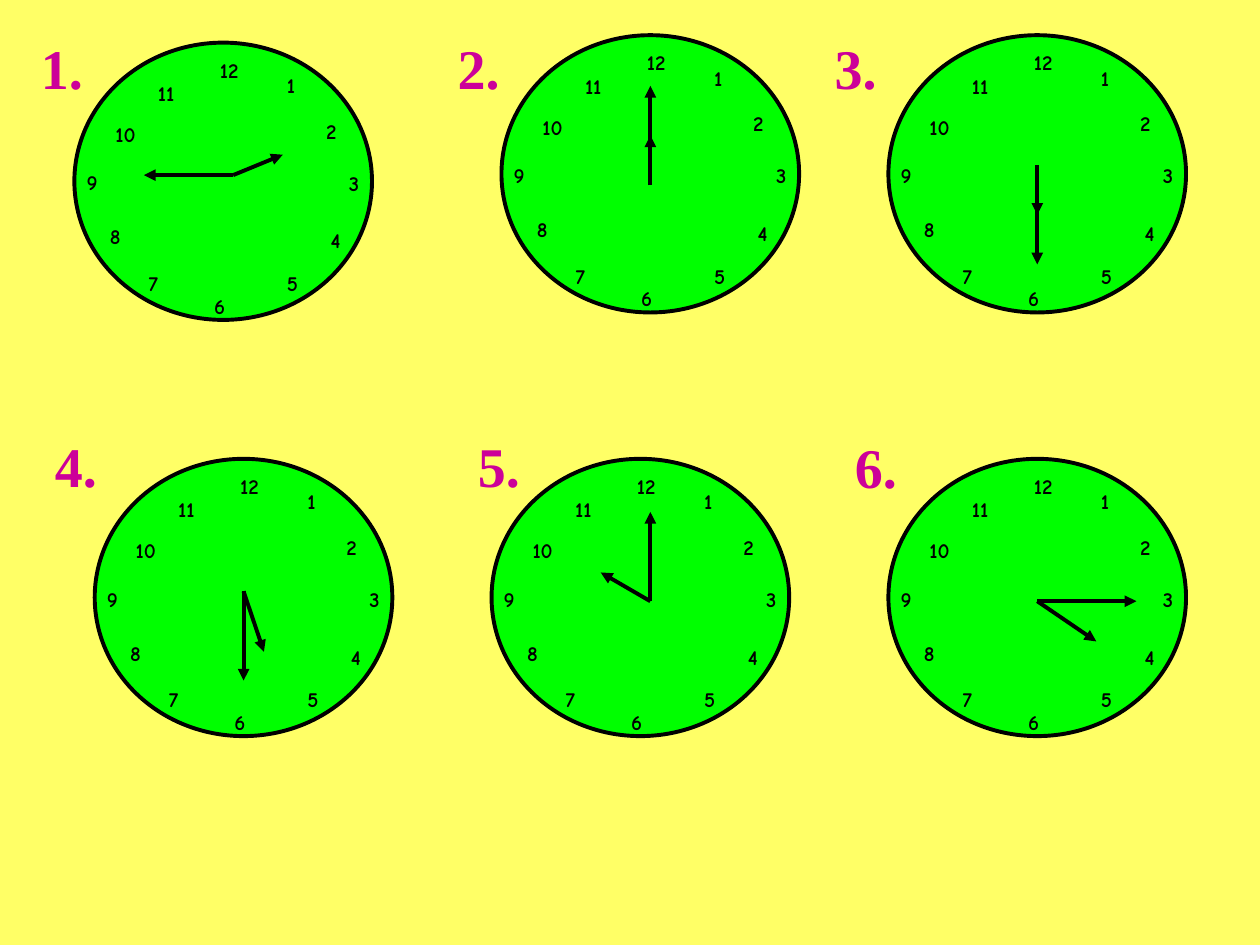
from lxml import etree
from pptx import Presentation
from pptx.dml.color import RGBColor
from pptx.enum.shapes import MSO_CONNECTOR, MSO_SHAPE
from pptx.enum.text import MSO_AUTO_SIZE, PP_ALIGN
from pptx.oxml.ns import qn
from pptx.util import Cm, Pt

OVAL = MSO_SHAPE.OVAL
LINE = MSO_CONNECTOR.STRAIGHT
CENTER = PP_ALIGN.CENTER
GROW = MSO_AUTO_SIZE.SHAPE_TO_FIT_TEXT
FIXED = MSO_AUTO_SIZE.NONE

YELLOW = RGBColor(0xFF, 0xFF, 0x66)
GREEN = RGBColor(0x00, 0xFF, 0x00)
BLACK = RGBColor(0x00, 0x00, 0x00)
PINK = RGBColor(0xCC, 0x00, 0x99)

WIDE, HIGH = 6, 5.59
HOUR = {
    "frame": {"word_wrap": False, "auto_size": GROW},
    "para": {"alignment": CENTER},
    "font": {"name": "Comic Neue", "size": Pt(12), "bold": True},
    "color": BLACK,
}
LABEL = {
    "frame": {"word_wrap": True, "auto_size": FIXED},
    "para": {"alignment": CENTER, "line_spacing": 0.9},
    "font": {"name": "Times New Roman", "size": Pt(32), "bold": True},
    "color": PINK,
}
HOURS = [
    (4.34, 0.48), (5.13, 1.4), (5.59, 2.45), (5.22, 3.61),
    (4.34, 4.47), (2.87, 4.93), (1.55, 4.47), (0.77, 3.53),
    (0.3, 2.44), (1.03, 1.47), (1.85, 0.64), (3.12, 0.17),
]
CLOCKS = [
    {"box": (1.5, 0.86), "label": (-1.09, -0.15), "hub": (3.2, 2.67),
     "hands": [(-1.8, 0), (1, -0.41)]},
    {"box": (10.11, 0.71), "label": (-1.3, 0), "hub": (3, 3.02),
     "hands": [(0, -2), (0, -1)]},
    {"box": (17.91, 0.71), "label": (-1.5, 0), "hub": (3, 2.62),
     "hands": [(0, 2), (0, 1)]},
    {"box": (1.91, 9.25), "label": (-1.22, -0.53), "hub": (3, 2.67),
     "hands": [(0, 1.8), (0.41, 1.22)]},
    {"box": (9.91, 9.25), "label": (-0.69, -0.53), "hub": (3.2, 2.87),
     "hands": [(0, -1.8), (-1, -0.58)]},
    {"box": (17.91, 9.25), "label": (-1.09, -0.51), "hub": (3, 2.87),
     "hands": [(2, 0), (1.19, 0.81)]},
]


def apply(target, values):
    """Set each attribute named in values on the target."""
    for name, value in values.items():
        setattr(target, name, value)


def write(shapes, text, box, style):
    """Place one line of styled text in the box."""
    frame = shapes.add_textbox(*map(Cm, box)).text_frame
    para = frame.paragraphs[0]
    run = para.add_run()
    run.text = text
    apply(frame, style["frame"])
    apply(para, style["para"])
    apply(run.font, style["font"])
    run.font.color.rgb = style["color"]


def ink(line):
    """Give a line the black stroke of the clocks."""
    line.color.rgb = BLACK
    line.width = Pt(2.25)


def face(slide, left, top):
    """Draw the dial and its twelve hours as one group."""
    shapes = slide.shapes.add_group_shape().shapes
    dial = shapes.add_shape(OVAL, Cm(left), Cm(top), Cm(WIDE), Cm(HIGH))
    dial.shadow.inherit = False
    dial.fill.solid()
    dial.fill.fore_color.rgb = GREEN
    ink(dial.line)
    for hour, (mid, drop) in enumerate(HOURS, 1):
        width = 0.61 if hour < 10 else 1.07
        box = (left + mid - width / 2, top + drop, width, 0.76)
        write(shapes, str(hour), box, HOUR)


def hand(slide, left, top, reach):
    """Draw one arrow from the hub by the given reach."""
    ends = (left, top, left + reach[0], top + reach[1])
    arrow = slide.shapes.add_connector(LINE, *map(Cm, ends))
    ink(arrow.line)
    etree.SubElement(arrow.line._get_or_add_ln(), qn("a:tailEnd"), type="triangle")
    etree.SubElement(arrow._element.spPr, qn("a:effectLst"))


def clock(slide, number, parts):
    """Draw a numbered clock with its face and hands."""
    left, top = parts["box"]
    face(slide, left, top)
    across, down = parts["label"]
    write(slide.shapes, f"{number}.", (left + across, top + down, 1.68, 1.4), LABEL)
    across, down = parts["hub"]
    for reach in parts["hands"]:
        hand(slide, left + across, top + down, reach)


def main():
    """Build the slide of six clocks and save it."""
    deck = Presentation()
    apply(deck, {"slide_width": Cm(25.4), "slide_height": Cm(19.05)})
    slide = deck.slides.add_slide(deck.slide_layouts[6])
    slide.background.fill.solid()
    slide.background.fill.fore_color.rgb = YELLOW
    for number, parts in enumerate(CLOCKS, 1):
        clock(slide, number, parts)
    deck.save("out.pptx")


if __name__ == "__main__":
    main()
